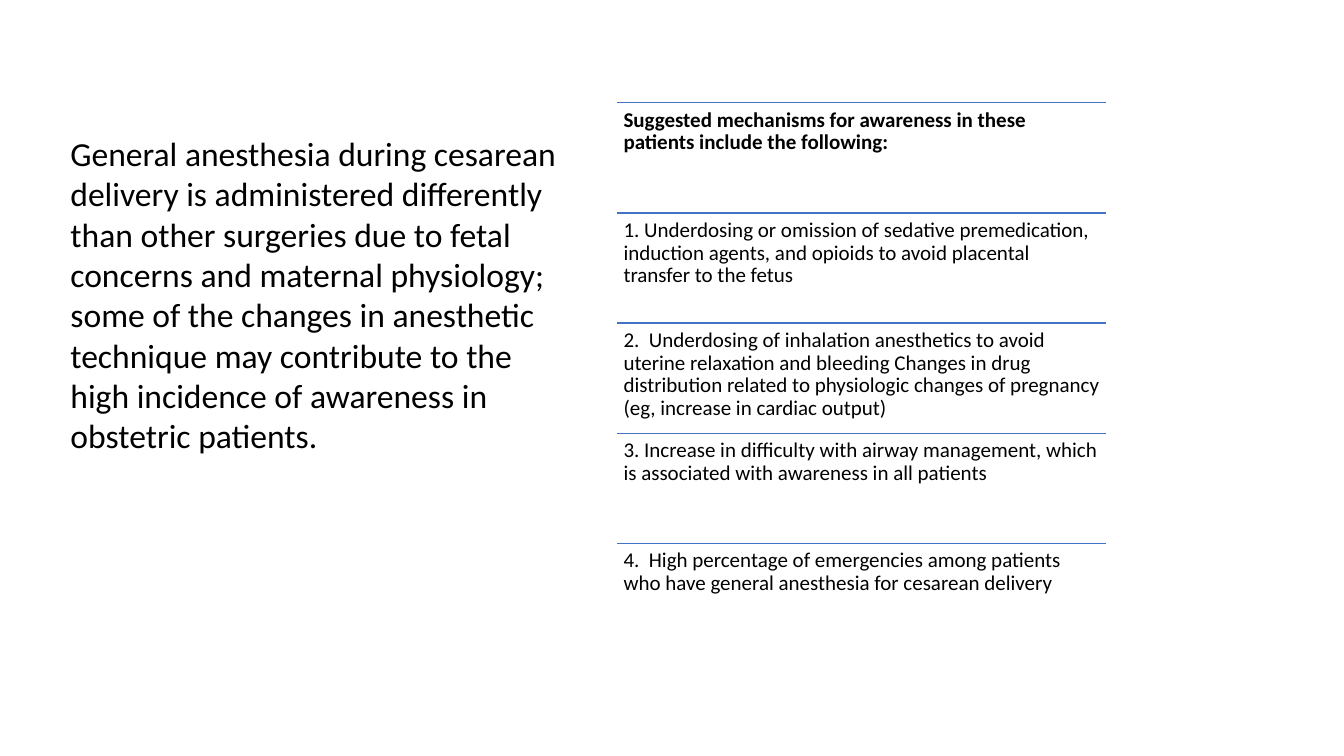
from lxml import etree
from pptx import Presentation
from pptx.dml.color import RGBColor
from pptx.enum.shapes import MSO_CONNECTOR
from pptx.enum.text import MSO_ANCHOR
from pptx.oxml.ns import qn
from pptx.util import Pt

STRAIGHT = MSO_CONNECTOR.STRAIGHT
TOP = MSO_ANCHOR.TOP

# Content
STATEMENT = (
    "General anesthesia during cesarean delivery is administered differently "
    "than other surgeries due to fetal concerns and maternal physiology; "
    "some of the changes in anesthetic technique may contribute to "
    "the high incidence of awareness in obstetric patients."
)
MECHANISMS = [
    "Suggested mechanisms for awareness in these patients include the following:",
    "1. Underdosing or omission of sedative premedication, induction agents, "
    "and opioids to avoid placental transfer to the fetus",
    "2.  Underdosing of inhalation anesthetics to avoid uterine relaxation and "
    "bleeding Changes in drug distribution related to physiologic changes of "
    "pregnancy (eg, increase in cardiac output)",
    "3. Increase in difficulty with airway management, which is associated with "
    "awareness in all patients",
    "4.  High percentage of emergencies among patients who have general "
    "anesthesia for cesarean delivery",
]
COLORS = {"text": "000000", "rule": "4472C4"}

# Layout, in points
STATEMENT_BOX = (43.2, 91.4, 373.7, 298)
LIST_LEFT, LIST_TOP, LIST_WIDTH, ROW_HEIGHT = 440.9, 73.4, 349.4, 78.7
ROW_INSET = 4.5


def add_text(slide, text, box, size, bold=False, inset=None, line_spacing=None):
    shape = slide.shapes.add_textbox(*[Pt(value) for value in box])
    frame = shape.text_frame
    frame_format = {"word_wrap": True, "vertical_anchor": TOP}
    if inset is not None:
        for side in ("left", "top", "right", "bottom"):
            frame_format["margin_" + side] = Pt(inset)
    for name, value in frame_format.items():
        setattr(frame, name, value)
    paragraph = frame.paragraphs[0]
    paragraph.line_spacing = line_spacing
    run = paragraph.add_run()
    run.text = text
    font_format = {"name": "Calibri", "size": Pt(size), "bold": bold}
    for name, value in font_format.items():
        setattr(run.font, name, value)
    run.font.color.rgb = RGBColor.from_string(COLORS["text"])


def add_rule(slide, left, top, width):
    rule = slide.shapes.add_connector(
        STRAIGHT, Pt(left), Pt(top), Pt(left + width), Pt(top))
    rule.line.color.rgb = RGBColor.from_string(COLORS["rule"])
    rule.line.width = Pt(1)
    etree.SubElement(rule.element.spPr, qn("a:effectLst"))


def main():
    presentation = Presentation()
    presentation.slide_width, presentation.slide_height = Pt(960), Pt(540)
    slide = presentation.slides.add_slide(presentation.slide_layouts[6])

    # Ruled list of mechanisms, headed by a bold row
    for index, mechanism in enumerate(MECHANISMS):
        top = LIST_TOP + index * ROW_HEIGHT
        add_rule(slide, LIST_LEFT, top, LIST_WIDTH)
        add_text(slide, mechanism, (LIST_LEFT, top, LIST_WIDTH, ROW_HEIGHT), 15,
                 bold=index == 0, inset=ROW_INSET, line_spacing=0.9)

    # Statement on the left
    add_text(slide, STATEMENT, STATEMENT_BOX, 24)

    presentation.save("out.pptx")


if __name__ == "__main__":
    main()
